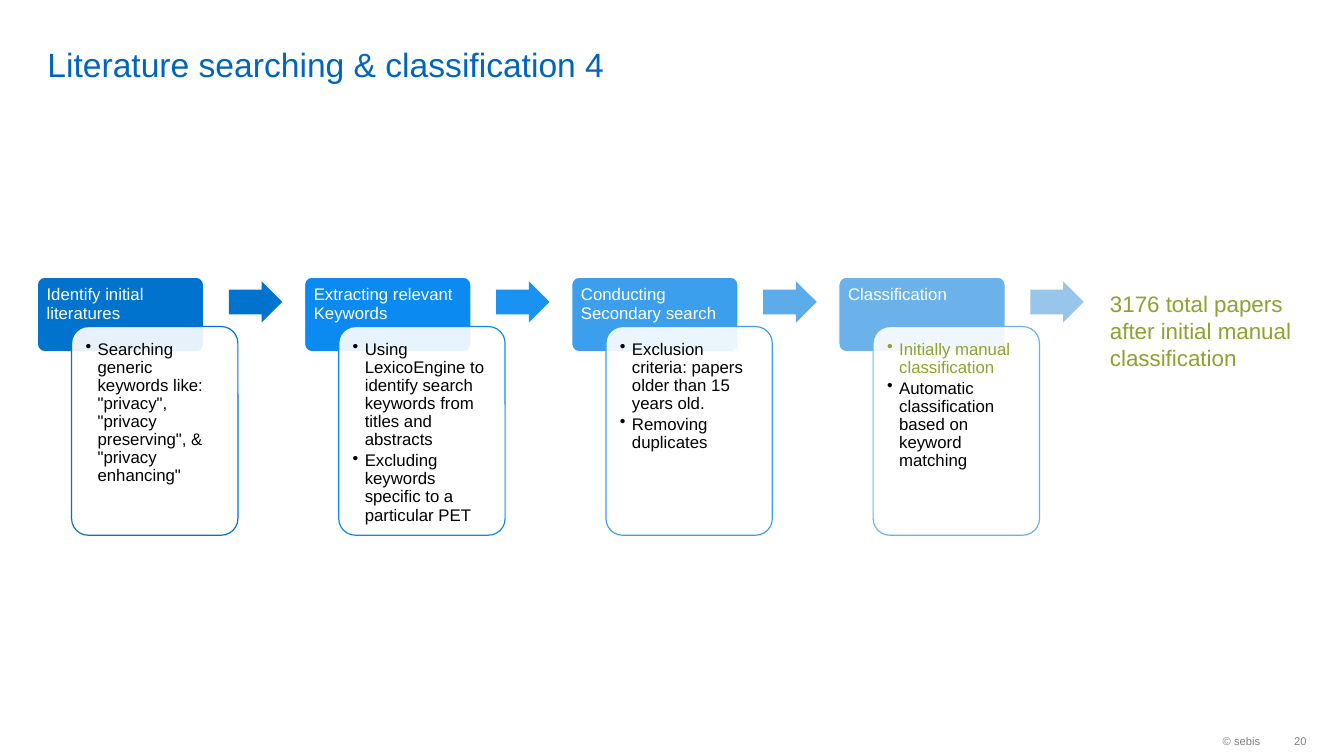
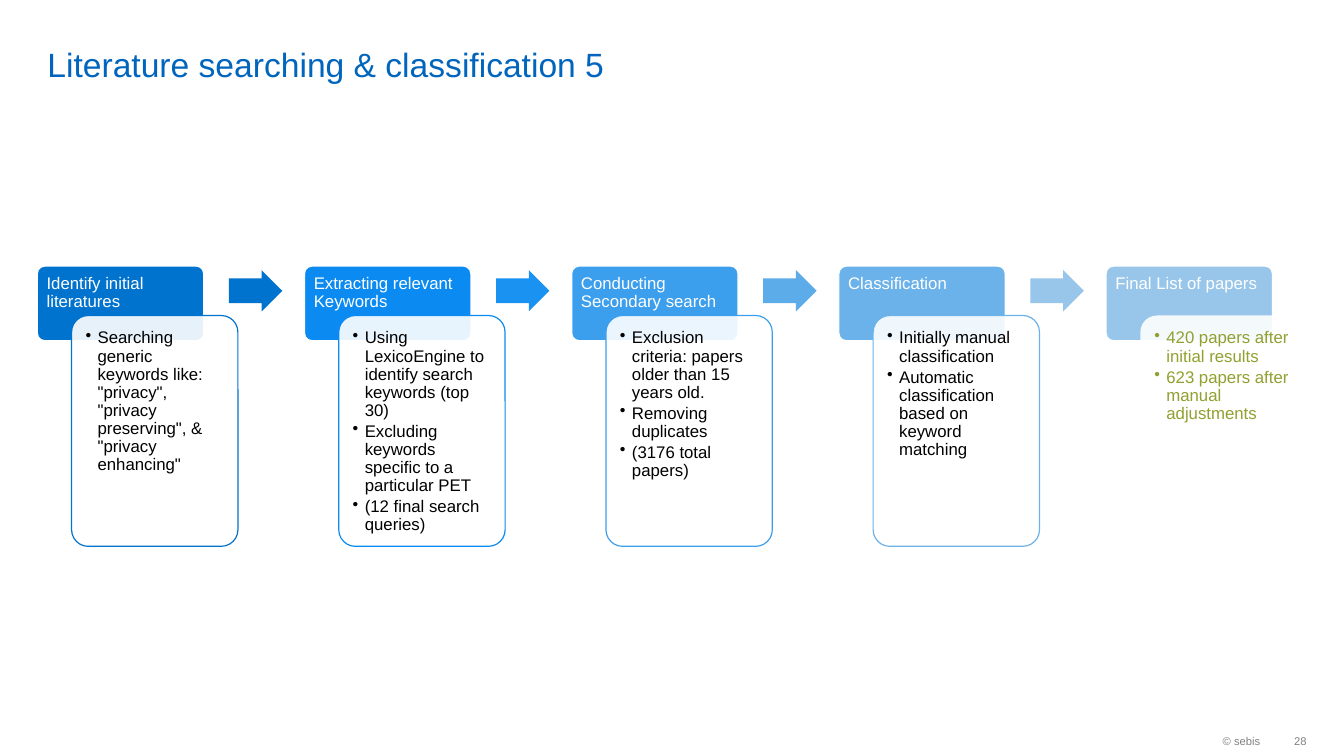
"""Build two slides showing the literature search process as a chain of steps."""
from pptx import Presentation
from pptx.dml.color import RGBColor
from pptx.enum.shapes import MSO_SHAPE
from pptx.enum.text import MSO_ANCHOR, PP_ALIGN
from pptx.oxml.ns import qn
from pptx.util import Inches, Pt
from lxml.etree import SubElement

FONT = "Arial"
TITLE_BLUE, GREEN, GRAY = "0065BD", "91A02F", "808080"
BLACK, WHITE = "000000", "FFFFFF"
STEP_LEFT, STEP_PITCH, STEP_WIDTH = 0.37, 2.65, 1.65

STEPS = [
    ("Identify initial literatures", "0073CF", "0073CF"),
    ("Extracting relevant Keywords", "0B8BF1", "1992F1"),
    ("Conducting Secondary search", "3C9FED", "5CACEA"),
    ("Classification", "6CB2EA", "98C6EA"),
    ("Final List of papers", "98C6EA", None),
]
SEARCHING = ("Searching generic keywords like: \"privacy\", \"privacy preserving\", "
             "& \"privacy enhancing\"", BLACK)
EXCLUDING = ("Excluding keywords specific to a particular PET", BLACK)
EXCLUSION = ("Exclusion criteria: papers older than 15 years old.", BLACK)
DUPLICATES = ("Removing duplicates", BLACK)
AUTOMATIC = ("Automatic classification based on keyword matching", BLACK)
MANUAL = "Initially manual classification"

SLIDES = [
    {
        "title": "Literature searching & classification 4",
        "number": "20",
        "top": 2.75,
        "card_height": 2.07,
        "cards": [
            [SEARCHING],
            [("Using LexicoEngine to identify search keywords from titles and abstracts", BLACK),
             EXCLUDING],
            [EXCLUSION, DUPLICATES],
            [(MANUAL, GREEN), AUTOMATIC],
        ],
        "result": "3176 total papers after initial manual classification",
    },
    {
        "title": "Literature searching & classification 5",
        "number": "28",
        "top": 2.64,
        "card_height": 2.29,
        "cards": [
            [SEARCHING],
            [("Using LexicoEngine to identify search keywords (top 30)", BLACK),
             EXCLUDING,
             ("(12 final search queries)", BLACK)],
            [EXCLUSION, DUPLICATES, ("(3176 total papers)", BLACK)],
            [(MANUAL, BLACK), AUTOMATIC],
            [("420 papers after initial results", GREEN),
             ("623 papers after manual adjustments", GREEN)],
        ],
        "result": None,
    },
]


def add_shape(slide, kind, box, fill, line=None, adjustments=(0.1,)):
    """Add a flat preset shape at the box given in inches."""
    shape = slide.shapes.add_shape(kind, *[Inches(length) for length in box])
    shape.shadow.inherit = False
    for index, value in enumerate(adjustments):
        shape.adjustments[index] = value
    shape.fill.solid()
    shape.fill.fore_color.rgb = RGBColor.from_string(fill)
    if line:
        shape.line.color.rgb = RGBColor.from_string(line)
        shape.line.width = Pt(0.85)
    else:
        shape.line.fill.background()
    return shape


def write(shape, lines, size, insets, anchor=MSO_ANCHOR.TOP, align=PP_ALIGN.LEFT,
          wrap=True, spacing=None, bullets=False):
    """Write (text, colour) lines as the paragraphs of a shape."""
    frame = shape.text_frame
    frame.word_wrap = wrap
    frame.vertical_anchor = anchor
    frame.margin_left, frame.margin_top, frame.margin_right, frame.margin_bottom = [
        Inches(inset) for inset in insets]
    for index, (text, color) in enumerate(lines):
        paragraph = frame.add_paragraph() if index else frame.paragraphs[0]
        paragraph.alignment = align
        if spacing:
            paragraph.line_spacing = spacing
        if bullets:
            paragraph.space_after = Pt(2)
            properties = paragraph._p.get_or_add_pPr()
            properties.set("marL", str(Inches(0.12)))
            properties.set("indent", str(-Inches(0.12)))
            SubElement(properties, qn("a:buChar"), char="•")
        run = paragraph.add_run()
        run.text = text
        run.font.name = FONT
        run.font.size = Pt(size)
        run.font.color.rgb = RGBColor.from_string(color)


presentation = Presentation()
presentation.slide_width = Inches(13.33)
presentation.slide_height = Inches(7.5)

for content in SLIDES:
    slide = presentation.slides.add_slide(presentation.slide_layouts[5])
    title = slide.shapes.title
    title.left, title.top, title.width, title.height = [
        Inches(length) for length in (0.37, 0.05, 11.58, 0.79)]
    write(title, [(content["title"], TITLE_BLUE)], 24, (0.1, 0, 0.1, 0), MSO_ANCHOR.BOTTOM)

    top = content["top"]
    for index, (heading, color, arrow_color) in enumerate(STEPS[:len(content["cards"])]):
        left = STEP_LEFT + index * STEP_PITCH
        header = add_shape(slide, MSO_SHAPE.ROUNDED_RECTANGLE,
                           (left, top, STEP_WIDTH, 0.74), color, WHITE)
        write(header, [(heading, WHITE)], 12, (0.07, 0.07, 0.07, 0.05), spacing=0.9)

        card = add_shape(slide, MSO_SHAPE.ROUNDED_RECTANGLE,
                         (left + 0.34, top + 0.49, STEP_WIDTH, content["card_height"]),
                         WHITE, color if arrow_color else None)
        card_color = card._element.spPr.find(qn("a:solidFill")).find(qn("a:srgbClr"))
        SubElement(card_color, qn("a:alpha"), val="90000")
        write(card, content["cards"][index], 12, (0.09,) * 4, spacing=0.9, bullets=True)

        if arrow_color:
            add_shape(slide, MSO_SHAPE.RIGHT_ARROW, (left + 1.9, top + 0.04, 0.53, 0.41),
                      arrow_color, adjustments=(0.6, 0.5))

    if content["result"]:
        result = slide.shapes.add_textbox(Inches(10.91), Inches(2.83), Inches(2.09), Inches(0.91))
        write(result, [(content["result"], GREEN)], 16, (0.1, 0.05, 0.1, 0.05))

    for text, left, width, right_inset in (("© sebis", 10.26, 2.34, 0.1),
                                           (content["number"], 12.6, 0.36, 0)):
        footer = slide.shapes.add_textbox(Inches(left), Inches(7.19), Inches(width), Inches(0.32))
        write(footer, [(text, GRAY)], 8, (0.1, 0.05, right_inset, 0.05),
              MSO_ANCHOR.MIDDLE, PP_ALIGN.RIGHT, wrap=False)

presentation.save("out.pptx")
